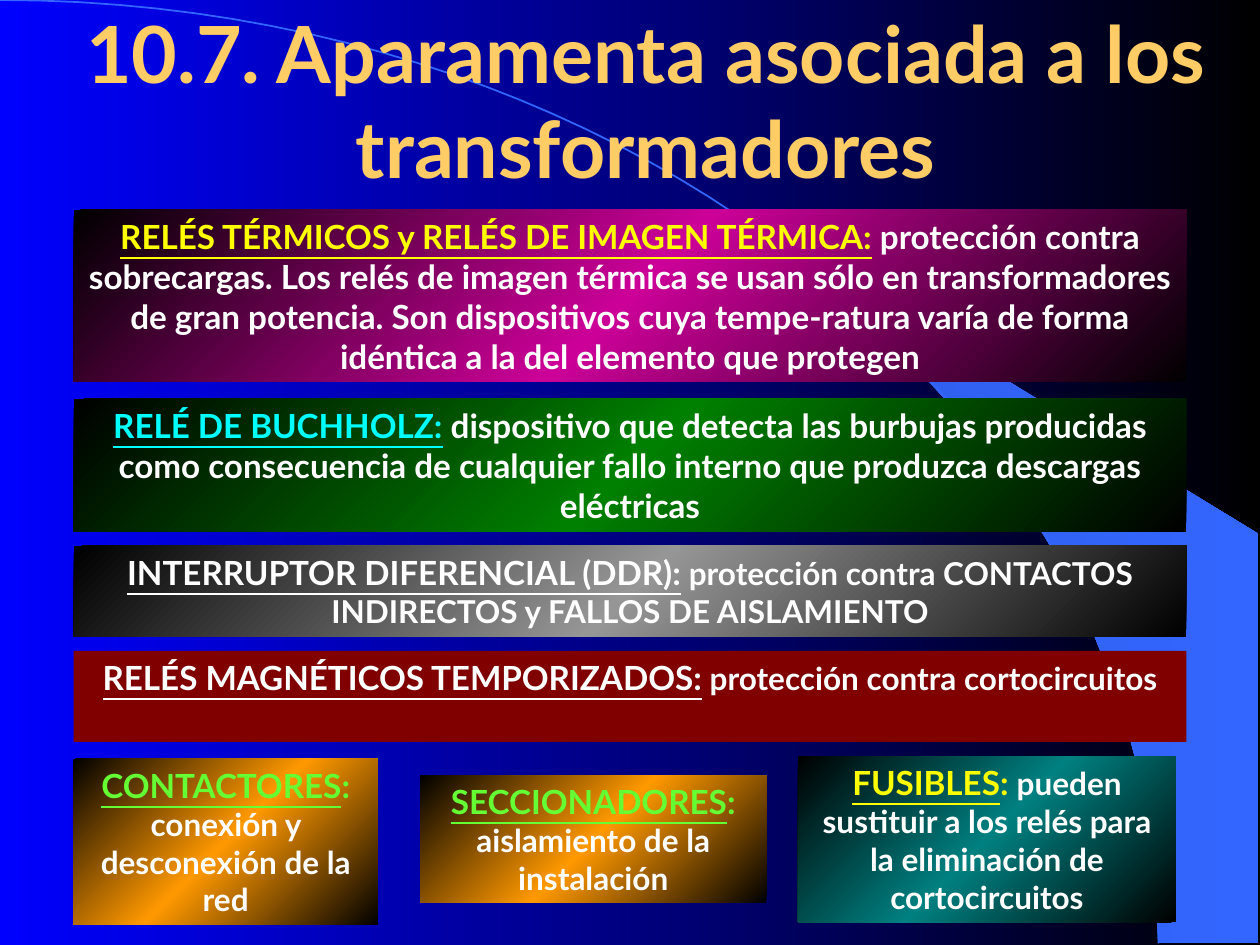
from copy import deepcopy

from pptx import Presentation
from pptx.dml.color import RGBColor
from pptx.enum.shapes import MSO_SHAPE as Kind
from pptx.enum.text import MSO_ANCHOR as Anchor, PP_ALIGN as Align
from pptx.oxml.ns import qn
from pptx.util import Pt

LEFT, WIDE = 42, 636
WHITE, GREEN, YELLOW = "FFFFFF", "66FF33", "FFFF00"

SWOOSH = [
    (662, 539), (719, 539), (719, 305), (424, 125), (449, 143), (470, 160),
    (493, 180), (516, 202), (549, 238), (578, 276), (599, 310), (618, 345),
    (632, 380), (643, 412), (650, 438), (657, 472), (660, 501),
]
BEND = [(0, 0), (366, 0), (662, 241), (662, 539)]

CARDS = [
    ((LEFT, 120, WIDE, 98), "CC0099", YELLOW,
     "RELÉS TÉRMICOS y RELÉS DE IMAGEN TÉRMICA:", "",
     " protección contra sobrecargas. Los relés de imagen térmica se usan "
     "sólo en transformadores de gran potencia. Son dispositivos cuya "
     "tempe-ratura varía de forma idéntica a la del elemento que protegen", 19),
    ((LEFT, 228, WIDE, 76), "008000", "00FFFF",
     "RELÉ DE BUCHHOLZ:", "",
     " dispositivo que detecta las burbujas producidas como consecuencia de "
     "cualquier fallo interno que produzca descargas eléctricas", 19),
    ((LEFT, 312, WIDE, 52), "969696", WHITE,
     "INTERRUPTOR DIFERENCIAL (DDR):", "",
     " protección contra CONTACTOS INDIRECTOS y FALLOS DE AISLAMIENTO", 18),
    ((LEFT, 433.5, 174, 95), "FF9900", GREEN,
     "CONTACTORES", ": ", "conexión y desconexión de la red", 18),
    ((240, 443, 198, 73), "FF9900", GREEN,
     "SECCIONADORES", ": ", "aislamiento de la instalación", 18),
    ((LEFT, 372, WIDE, 52), "800000", WHITE,
     "RELÉS MAGNÉTICOS TEMPORIZADOS:", "",
     " protección contra cortocircuitos", 18),
    ((456, 432, 216, 95), "008080", YELLOW,
     "FUSIBLES", ": ",
     "pueden sustituir a los relés para la eliminación de cortocircuitos", 18),
]


def tint(code):
    """Turn a hex string into a colour."""
    return RGBColor.from_string(code)


def blend(fill, root, codes, angle=0):
    """Fill with evenly spaced stops along a clockwise angle."""
    fill.gradient()
    fill.gradient_angle = -angle % 360
    stops = root.find(".//" + qn("a:gsLst"))
    while len(stops) < len(codes):
        stops.append(deepcopy(stops[-1]))
    for i, (stop, code) in enumerate(zip(fill.gradient_stops, codes)):
        stop.color.rgb = tint(code)
        stop.position = i / (len(codes) - 1)


def outline(slide, dots, close):
    """Draw a freeform through the given points."""
    spots = [(Pt(x), Pt(y)) for x, y in dots]
    pen = slide.shapes.build_freeform(*spots[0])
    pen.add_line_segments(spots[1:], close=close)
    shape = pen.convert_to_shape()
    shape.shadow.inherit = False
    return shape


def curve(ends, steps=48):
    """Give points along a cubic curve."""
    dots = []
    for i in range(steps + 1):
        t = i / steps
        u = 1 - t
        parts = (u**3, 3 * u * u * t, 3 * u * t * t, t**3)
        dots.append(tuple(sum(w * p[k] for w, p in zip(parts, ends))
                          for k in (0, 1)))
    return dots


def style(run, size, code, under=False):
    """Set the look of one run."""
    font = run.font
    font.name, font.size, font.bold = "Lato", Pt(size), True
    font.underline = under
    font.color.rgb = tint(code)


def title(slide, text):
    """Add the heading."""
    frame = slide.shapes.add_textbox(Pt(12), Pt(12), Pt(714), Pt(90)).text_frame
    frame.word_wrap = True
    frame.vertical_anchor = Anchor.MIDDLE
    frame.text = text
    para = frame.paragraphs[0]
    para.alignment = Align.CENTER
    style(para.runs[0], 45, "FFCC66")


def card(slide, box, code, hue, head, mark, body, size):
    """Add a box with an underlined term and its description."""
    shape = slide.shapes.add_shape(Kind.RECTANGLE, *map(Pt, box))
    shape.shadow.inherit = False
    shape.line.fill.background()
    if code == "800000":
        shape.fill.solid()
        shape.fill.fore_color.rgb = tint(code)
    else:
        blend(shape.fill, shape.element, ["000000", code, "000000"], 45)
    frame = shape.text_frame
    frame.word_wrap = True
    frame.vertical_anchor = Anchor.TOP
    para = frame.paragraphs[0]
    para.alignment = Align.CENTER
    looks = [(head, 19, hue, True), (mark, 19, hue, False),
             (body, size, WHITE, False)]
    for text, *look in looks:
        if text:
            run = para.add_run()
            run.text = text
            style(run, *look)


def main():
    """Build the slide."""
    deck = Presentation()
    deck.slide_width, deck.slide_height = Pt(720), Pt(540)
    slide = deck.slides.add_slide(deck.slide_layouts[6])
    blend(slide.background.fill, slide.element, ["0000FF", "000000"])
    wing = outline(slide, SWOOSH, True)
    wing.line.fill.background()
    blend(wing.fill, wing.element, ["2E5DE7", "3366FF"])
    arc = outline(slide, curve(BEND), False)
    arc.fill.background()
    arc.line.color.rgb = tint("3366FF")
    arc.line.width = Pt(1)
    title(slide, "10.7. Aparamenta asociada a los transformadores")
    for item in CARDS:
        card(slide, *item)
    deck.save("out.pptx")


if __name__ == "__main__":
    main()
